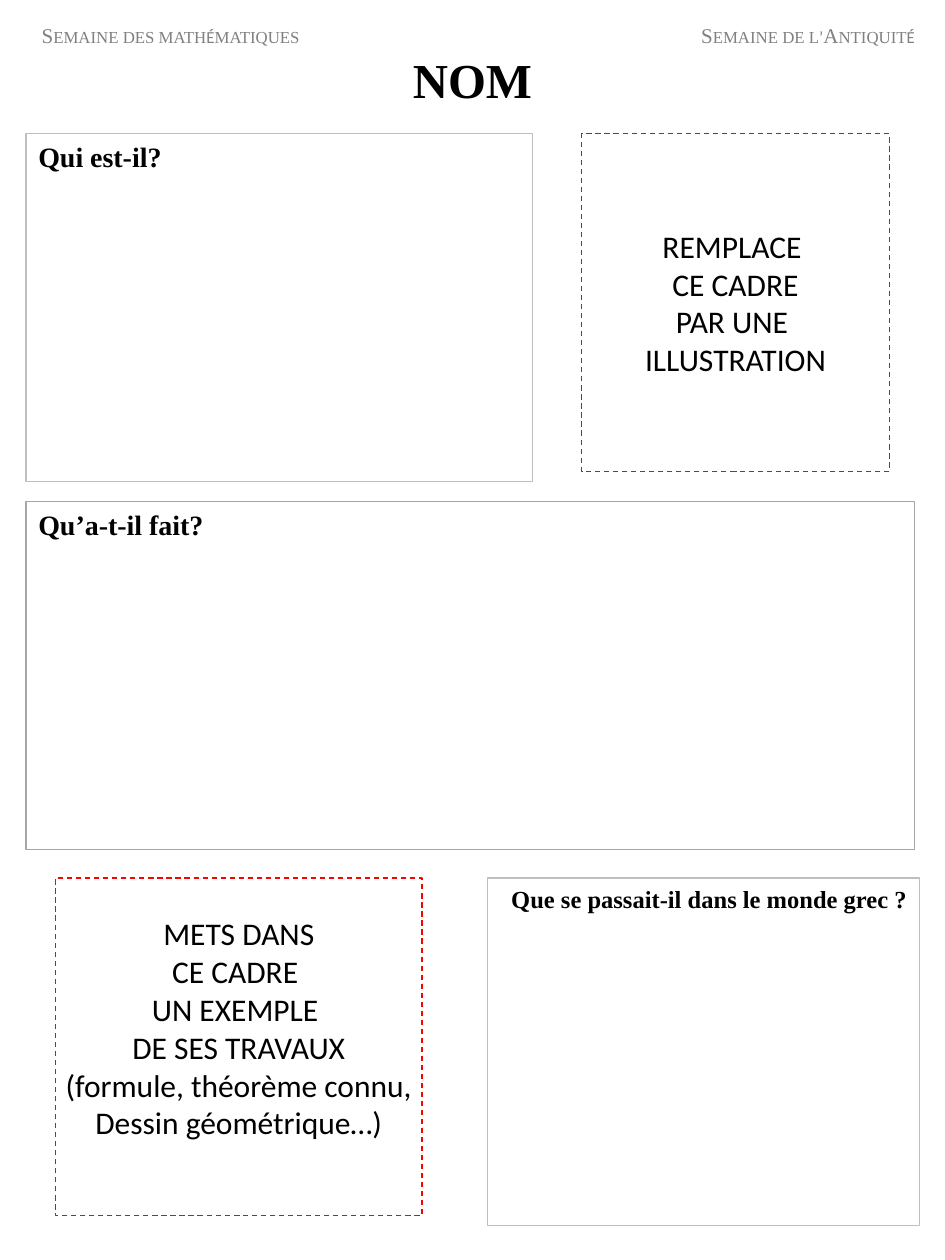
from lxml import etree
from pptx import Presentation
from pptx import util as u
from pptx.dml.color import RGBColor
from pptx.enum import dml, shapes, text
from pptx.oxml.ns import qn

COLORS = {"ink": "000000", "muted": "808080", "pale": "BFBFBF",
          "grey": "A6A6A6", "red": "FF0000"}
SERIF, SANS = "Times New Roman", "Calibri"
LEFT, CENTER, RIGHT = (text.PP_ALIGN.LEFT, text.PP_ALIGN.CENTER,
                       text.PP_ALIGN.RIGHT)


class Sheet:
    """Holds the worksheet style and the current page."""

    def __init__(self, page):
        self.page = page

    def format_frame(self, frame, **values):
        defaults = {"word_wrap": True, "auto_size": text.MSO_AUTO_SIZE.NONE}
        for name, value in (defaults | values).items():
            setattr(frame, name, value)

    def add_span(self, para, words, color="ink", **values):
        span = para.add_run()
        span.text = words
        for name, value in values.items():
            setattr(span.font, name, value)
        span.font.color.rgb = RGBColor.from_string(COLORS[color])
        return span

    def title(self, words, left, top, width, height):
        box = self.page.shapes.title
        places = {"left": left, "top": top, "width": width, "height": height}
        for name, value in places.items():
            setattr(box, name, u.Pt(value))
        self.format_frame(box.text_frame, vertical_anchor=text.MSO_ANCHOR.MIDDLE)
        para = box.text_frame.paragraphs[0]
        para.alignment = CENTER
        self.add_span(para, words, name=SERIF, size=u.Pt(27.9), bold=True)

    def header(self, pieces, left, top, width, height, tab):
        box = self.page.shapes.add_textbox(*map(u.Pt, (left, top, width, height)))
        self.format_frame(box.text_frame, margin_left=u.Pt(20.2),
                          vertical_anchor=text.MSO_ANCHOR.MIDDLE)
        para = box.text_frame.paragraphs[0]
        para.alignment = LEFT
        # Right tab stop that sends the second heading to the right edge
        tabs = etree.SubElement(para._p.get_or_add_pPr(), qn("a:tabLst"))
        etree.SubElement(tabs, qn("a:tab"), pos=str(u.Pt(tab)), algn="r")
        for words, font in pieces:
            span = self.add_span(para, words, "muted", name=font, size=u.Pt(12))
            span.font._element.set("cap", "small")

    def frame(self, lines, left, top, width, height, line, align, font, size,
              bold=False, dash=None, **values):
        box = self.page.shapes.add_shape(
            shapes.MSO_SHAPE.RECTANGLE, *map(u.Pt, (left, top, width, height)))
        box.shadow.inherit = False
        box.fill.background()
        box.line.color.rgb = RGBColor.from_string(COLORS[line])
        box.line.width = u.Pt(0.75)
        if dash:
            box.line.dash_style = dash
        self.format_frame(box.text_frame, **values)
        for index, words in enumerate(lines):
            para = (box.text_frame.add_paragraph() if index
                    else box.text_frame.paragraphs[0])
            para.alignment = align
            self.add_span(para, words, name=font, size=u.Pt(size), bold=bold)

    def question(self, words, left, top, width, line="pale", align=LEFT, size=16):
        self.frame([words], left, top, width, 198.7, line, align, SERIF, size,
                   bold=True, vertical_anchor=text.MSO_ANCHOR.TOP)

    def prompt(self, lines, left, top, width, bottom=3.6):
        self.frame(lines, left, top, width, 193, "red", CENTER, SANS, 18,
                   dash=dml.MSO_LINE.DASH, word_wrap=False,
                   margin_bottom=u.Pt(bottom),
                   vertical_anchor=text.MSO_ANCHOR.MIDDLE)


def main():
    deck = Presentation()
    deck.slide_width, deck.slide_height = u.Pt(540), u.Pt(720)
    sheet = Sheet(deck.slides.add_slide(deck.slide_layouts[5]))

    # Heading
    sheet.title("NOM", 40.3, 25.2, 459.4, 39.6)
    sheet.header([("Semaine des math", SERIF), ("é", SANS),
                  ("matiques\tSemaine de l", SERIF), ("’", SANS),
                  ("Antiquit", SERIF), ("é", SANS)],
                 3.6, 9.4, 540, 21.6, tab=499)

    # Questions to answer
    top, middle, bottom = 76.3, 286.6, 501.8
    sheet.question("Qui est-il?", 14.8, top, 289.4)
    sheet.question("Que se passait-il dans le monde grec\u00a0?", 278.6, bottom,
                   247, align=RIGHT, size=14)
    sheet.question("Qu’a-t-il fait?", 14.8, middle, 507.6, line="grey")

    # Frames to replace; the lower one sits one half line above centre
    sheet.prompt(["REMPLACE ", "CE CADRE", "PAR UNE ", "ILLUSTRATION"],
                 332.3, top, 176)
    sheet.prompt(["METS DANS", "CE CADRE ", "UN EXEMPLE ", "DE SES TRAVAUX",
                  "(formule, théorème connu,", "Dessin géométrique…)"],
                 31.7, bottom, 209.5, bottom=25.6)

    deck.save("out.pptx")


if __name__ == "__main__":
    main()
